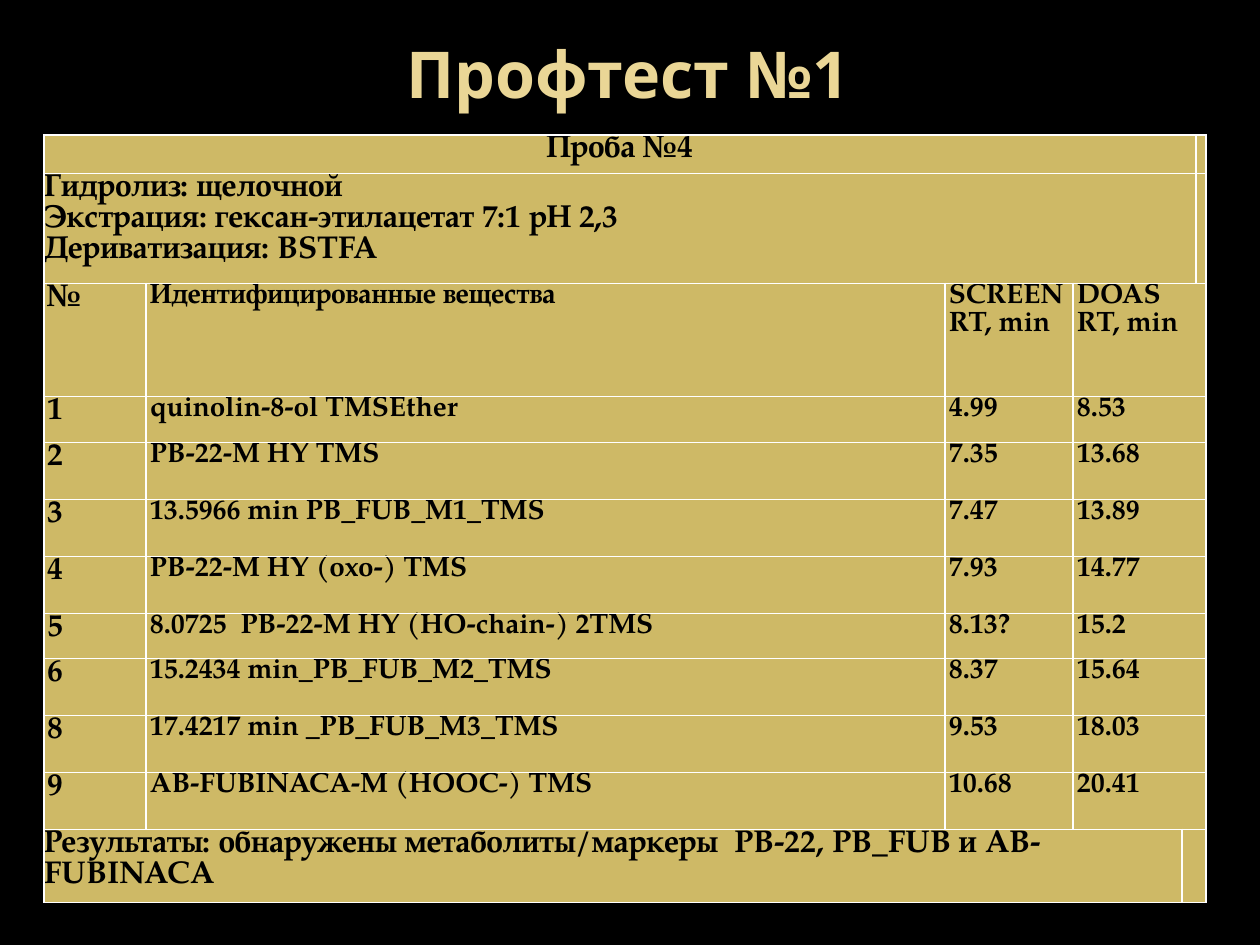
import pptx
import pptx.util
import pptx.dml.color
import pptx.enum.text
import pptx.oxml
import pptx.oxml.ns

SCALE = 914400 / 126
COLORS = {"back": "000000", "title": "EAD696", "cell": "CEB966",
          "text": "000000", "line": "FFFFFF"}
FONTS = {"title": "Open Sans", "table": "TeX Gyre Pagella"}
COLS = [102, 799, 128, 109, 14, 10]
ROWS = [36, 110, 113, 46, 57, 57, 57, 45, 57, 57, 57, 73]
SAMPLE = "Проба №4"
METHOD = ("Гидролиз: щелочной\nЭкстрация: гексан-этилацетат 7:1 рН 2,3\n"
          "Дериватизация: BSTFA")
RESULT = "Результаты: обнаружены метаболиты/маркеры  PB-22, PB_FUB и AB-FUBINACA"
FINDS = [
    ("№", "Идентифицированные вещества", "SCREEN\nRT, min", "DOAS\nRT, min"),
    ("1", "quinolin-8-ol TMSEther", "4.99", "8.53"),
    ("2", "PB-22-M HY TMS", "7.35", "13.68"),
    ("3", "13.5966 min PB_FUB_M1_TMS", "7.47", "13.89"),
    ("4", "PB-22-M HY (oxo-) TMS", "7.93", "14.77"),
    ("5", "8.0725  PB-22-M HY (HO-chain-) 2TMS", "8.13?", "15.2"),
    ("6", "15.2434 min_PB_FUB_M2_TMS", "8.37", "15.64"),
    ("8", "17.4217 min _PB_FUB_M3_TMS", "9.53", "18.03"),
    ("9", "AB-FUBINACA-M (HOOC-) TMS", "10.68", "20.41"),
]
ALIGN = pptx.enum.text.PP_ALIGN


def px(num):
    """Turn px into EMU."""
    return pptx.util.Emu(round(num * SCALE))


def tint(name):
    """Give the named colour."""
    return pptx.dml.color.RGBColor.from_string(COLORS[name])


def style(para, face, size, color):
    """Format the runs of a paragraph."""
    for run in para.runs:
        run.font.name = FONTS[face]
        run.font.size = pptx.util.Pt(size)
        run.font.bold = True
        run.font.color.rgb = tint(color)


def add_title(slide, text):
    """Fill and place the title."""
    title = slide.shapes.title
    title.left, title.top, title.width, title.height = map(px, (64, 37, 1128, 72))
    frame = title.text_frame
    frame.text = text
    frame.vertical_anchor = pptx.enum.text.MSO_ANCHOR.MIDDLE
    frame.paragraphs[0].alignment = ALIGN.CENTER
    style(frame.paragraphs[0], "title", 36.9, "title")


def edge(cell):
    """Draw the four borders of a cell."""
    props = cell._tc.get_or_add_tcPr()
    for pos, side in enumerate(("lnL", "lnR", "lnT", "lnB")):
        props.insert(pos, pptx.oxml.parse_xml(
            f'<a:{side} {pptx.oxml.ns.nsdecls("a")} w="12700"><a:solidFill>'
            f'<a:srgbClr val="{COLORS["line"]}"/></a:solidFill></a:{side}>'))


def paint(cell):
    """Set the fill, borders and margins of a cell."""
    cell.fill.solid()
    cell.fill.fore_color.rgb = tint("cell")
    cell.margin_left = cell.margin_right = 0
    cell.margin_top = cell.margin_bottom = 0
    cell.text_frame.paragraphs[0].line_spacing = pptx.util.Pt(10)
    edge(cell)


def write(cell, text, size=18, align=ALIGN.LEFT, inset=0):
    """Put formatted text in a cell."""
    cell.margin_left = cell.margin_right = px(inset)
    cell.text_frame.text = text
    for para in cell.text_frame.paragraphs:
        para.alignment = align
        para.line_spacing = pptx.util.Pt(size - 0.3)
        style(para, "table", size, "text")


def join(table, row, first, last):
    """Merge cells along one row."""
    table.cell(row, first).merge(table.cell(row, last))


def add_grid(slide):
    """Build the table of found substances."""
    frame = slide.shapes.add_table(len(ROWS), len(COLS), px(44), px(135),
                                   px(sum(COLS)), px(sum(ROWS)))
    table = frame.table
    table.first_row = table.horz_banding = False
    for col, width in zip(table.columns, COLS):
        col.width = px(width)
    for row, height in zip(table.rows, ROWS):
        row.height = px(height)
    for cell in table.iter_cells():
        paint(cell)
    join(table, 0, 0, 4)
    join(table, 1, 0, 4)
    write(table.cell(0, 0), SAMPLE, align=ALIGN.CENTER)
    write(table.cell(1, 0), METHOD)
    for row, texts in enumerate(FINDS, 2):
        join(table, row, 3, 5)
        for col, text in enumerate(texts):
            write(table.cell(row, col), text, 16 if col else 18, inset=4)
    last = len(ROWS) - 1
    join(table, last, 0, 3)
    join(table, last, 4, 5)
    write(table.cell(last, 0), RESULT)


def main():
    """Build and save the slide."""
    deck = pptx.Presentation()
    deck.slide_width, deck.slide_height = px(1260), px(945)
    slide = deck.slides.add_slide(deck.slide_layouts[5])
    slide.background.fill.solid()
    slide.background.fill.fore_color.rgb = tint("back")
    add_title(slide, "Профтест №1")
    add_grid(slide)
    deck.save("out.pptx")


if __name__ == "__main__":
    main()
